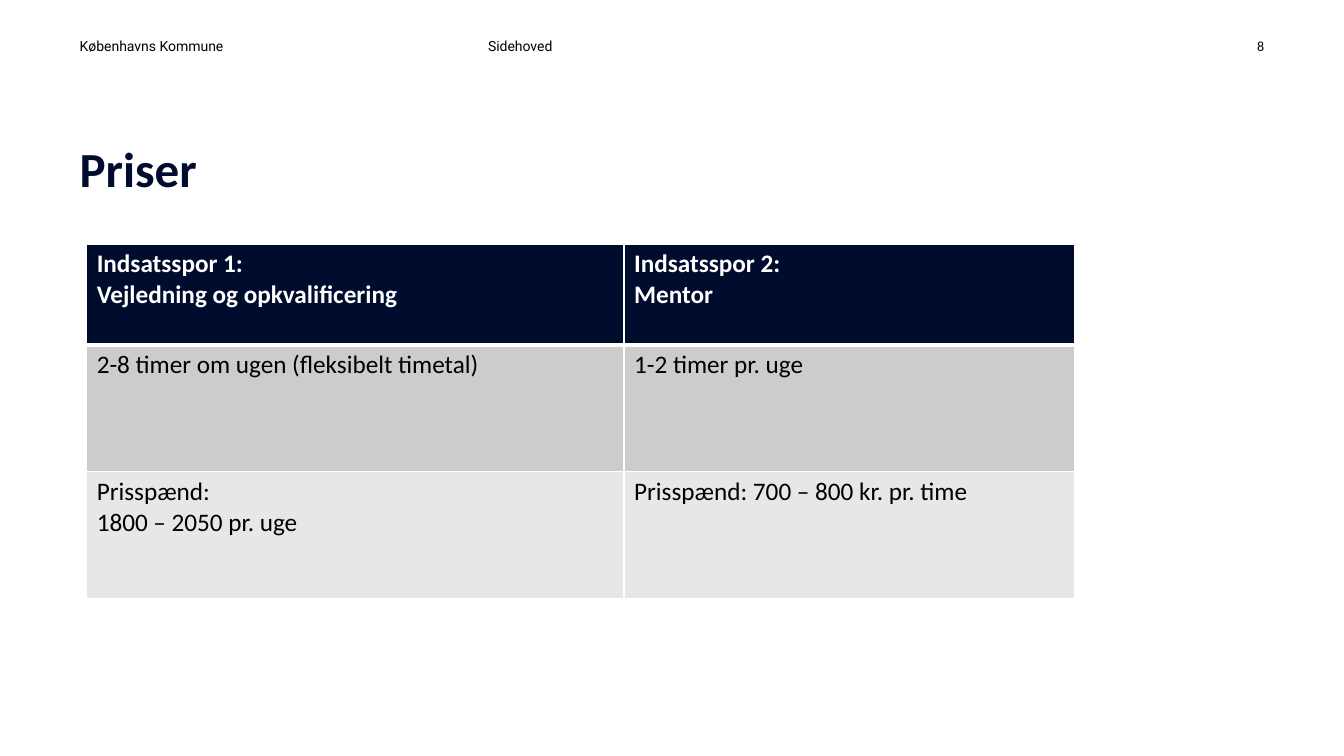
import pptx
import pptx.dml.color
import pptx.enum.text
import pptx.oxml
import pptx.oxml.ns
import pptx.util

# Content
TITLE = "Priser"
PRICE_ROWS = [
    ["Indsatsspor 1:\nVejledning og opkvalificering", "Indsatsspor 2:\nMentor"],
    ["2-8 timer om ugen (fleksibelt timetal)", "1-2 timer pr. uge"],
    ["Prisspænd:\n1800 – 2050 pr. uge", "Prisspænd: 700 – 800 kr. pr. time"],
]

ALIGN = pptx.enum.text.PP_ALIGN
ANCHOR = pptx.enum.text.MSO_ANCHOR
Inches = pptx.util.Inches

# Text, left, width, font and alignment of each page-header item
HEADER_ITEMS = [
    ("Københavns Kommune", 0.79, 3.85, "Roboto", ALIGN.LEFT),
    ("Sidehoved", 4.84, 4.48, "Roboto", ALIGN.LEFT),
    ("8", 12.11, 0.43, "Calibri", ALIGN.RIGHT),
]

# Theme: type styles, row fills and cell borders
THEME = {
    "header": {"size": 10, "color": "000000", "bold": False},
    "title": {"name": "Calibri", "size": 35, "color": "000C2E", "bold": True},
    "table_head": {"name": "Calibri", "size": 18, "color": "FFFFFF", "bold": True},
    "table_body": {"name": "Calibri", "size": 18, "color": "000000", "bold": False},
    "row_fills": ["000C2E", "CCCCCD", "E7E7E8"],
    "border_color": "FFFFFF",
    "border": 1,
    "heavy_border": 3,
}

# Layout in inches
SLIDE_SIZE = (13.33, 7.5)
HEADER_TOP, HEADER_HEIGHT = 0.34, 0.2
TITLE_BOX = (0.79, 0.98, 11.76, 0.98)
TABLE_LEFT, TABLE_TOP = 0.86, 2.42
COLUMN_WIDTHS = [5.33, 4.47]
ROW_HEIGHTS = [1.0, 1.26, 1.26]


def rgb(value):
    return pptx.dml.color.RGBColor.from_string(value)


def write(frame, text, style, align=ALIGN.LEFT, line_spacing=None):
    frame.text = text
    for paragraph in frame.paragraphs:
        paragraph.alignment = align
        paragraph.line_spacing = line_spacing
        for run in paragraph.runs:
            run.font.color.rgb = rgb(style["color"])
            run.font.size = pptx.util.Pt(style["size"])
            for name in ("name", "bold"):
                setattr(run.font, name, style[name])


def set_frame(frame):
    settings = {
        "margin_left": 0, "margin_top": 0, "margin_right": 0, "margin_bottom": 0,
        "word_wrap": True, "vertical_anchor": ANCHOR.BOTTOM,
        "auto_size": pptx.enum.text.MSO_AUTO_SIZE.NONE,
    }
    for name, value in settings.items():
        setattr(frame, name, value)


def set_borders(cell, widths):
    properties = cell._tc.get_or_add_tcPr()
    for side in "LRTB":
        properties.append(pptx.oxml.parse_xml(
            f'<a:ln{side} {pptx.oxml.ns.nsdecls("a")} w="{pptx.util.Pt(widths[side])}">'
            f'<a:solidFill><a:srgbClr val="{THEME["border_color"]}"/></a:solidFill>'
            f'</a:ln{side}>'))


def add_header(slide):
    for text, left, width, font, align in HEADER_ITEMS:
        box = slide.shapes.add_textbox(
            *map(Inches, (left, HEADER_TOP, width, HEADER_HEIGHT)))
        set_frame(box.text_frame)
        write(box.text_frame, text, {**THEME["header"], "name": font}, align)


def add_title(slide):
    title = slide.shapes.title
    title.left, title.top, title.width, title.height = map(Inches, TITLE_BOX)
    set_frame(title.text_frame)
    write(title.text_frame, TITLE, THEME["title"], line_spacing=0.83)


def add_prices(slide):
    table = slide.shapes.add_table(
        len(PRICE_ROWS), len(COLUMN_WIDTHS), Inches(TABLE_LEFT), Inches(TABLE_TOP),
        Inches(sum(COLUMN_WIDTHS)), Inches(sum(ROW_HEIGHTS))).table
    for column, width in zip(table.columns, COLUMN_WIDTHS):
        column.width = Inches(width)
    for index, (row, texts) in enumerate(zip(table.rows, PRICE_ROWS)):
        row.height = Inches(ROW_HEIGHTS[index])
        widths = dict.fromkeys("LRTB", THEME["border"])
        # A heavy rule parts the head row from the body
        if index == 0:
            widths["B"] = THEME["heavy_border"]
        elif index == 1:
            widths["T"] = THEME["heavy_border"]
        style = THEME["table_body" if index else "table_head"]
        for cell, text in zip(row.cells, texts):
            set_borders(cell, widths)
            cell.fill.solid()
            cell.fill.fore_color.rgb = rgb(THEME["row_fills"][index])
            write(cell.text_frame, text, style)


def main():
    presentation = pptx.Presentation()
    presentation.slide_width, presentation.slide_height = map(Inches, SLIDE_SIZE)
    slide = presentation.slides.add_slide(presentation.slide_layouts[5])
    add_header(slide)
    add_title(slide)
    add_prices(slide)
    presentation.save("out.pptx")


if __name__ == "__main__":
    main()
